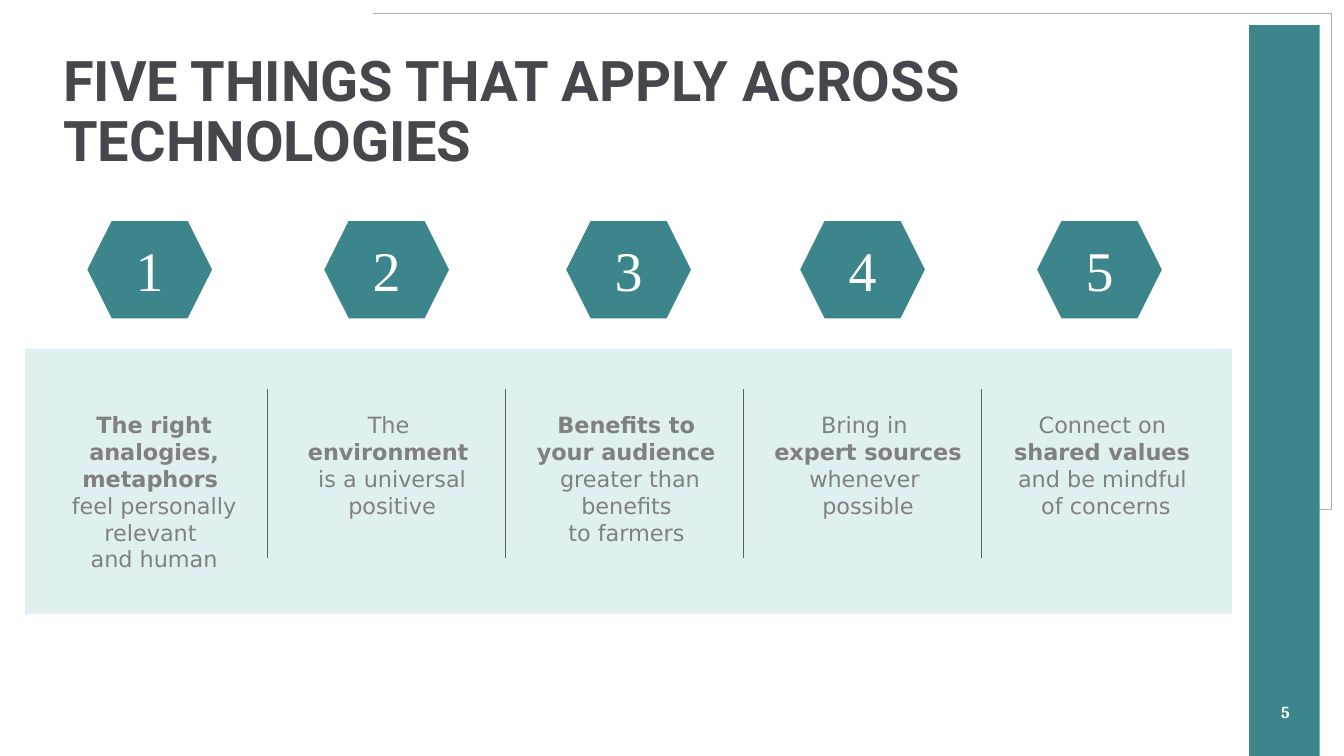
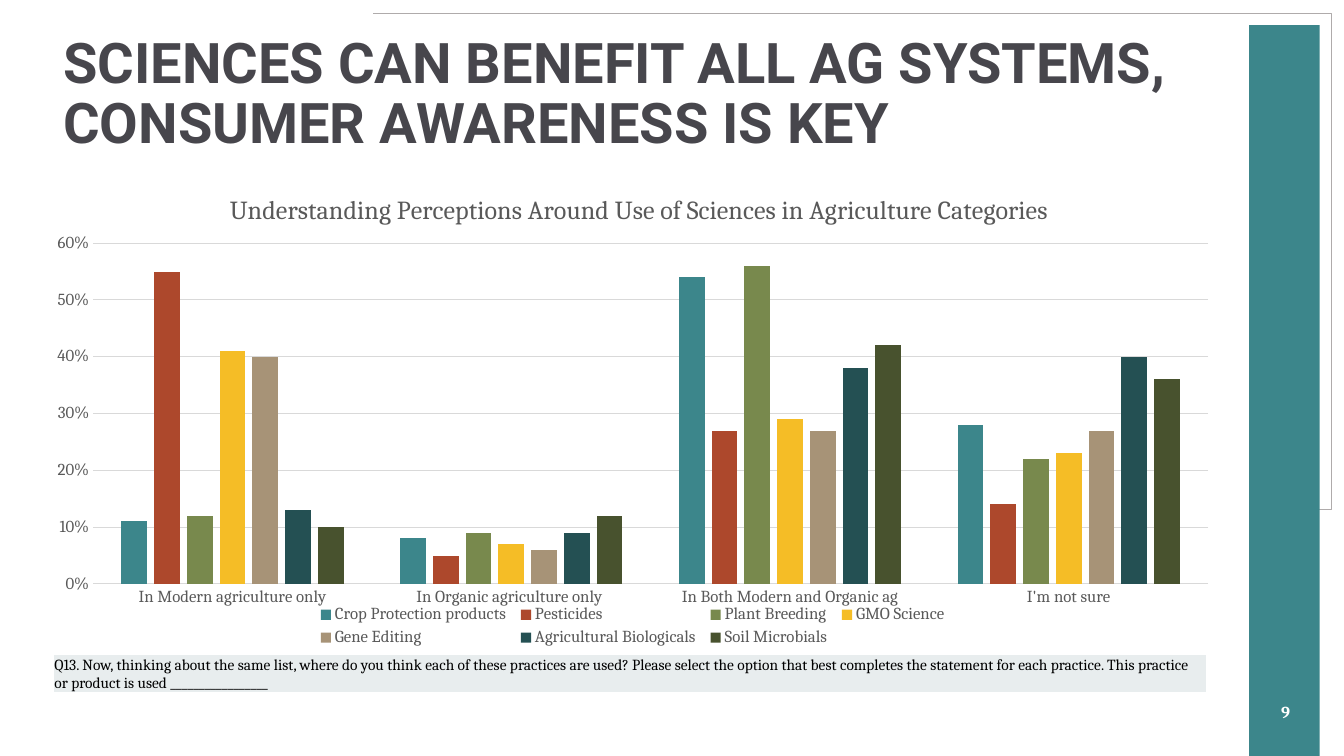
from typing import NamedTuple

from lxml.etree import SubElement
from pptx import Presentation
from pptx.chart.data import CategoryChartData
from pptx.dml.color import RGBColor
from pptx.enum.chart import XL_CHART_TYPE as ChartType, XL_LEGEND_POSITION as LegendPosition
from pptx.enum.chart import XL_TICK_MARK as TickMark
from pptx.enum.shapes import MSO_CONNECTOR as Connector, MSO_SHAPE as Preset
from pptx.enum.text import MSO_ANCHOR as Anchor, MSO_AUTO_SIZE as AutoSize, PP_ALIGN as Align
from pptx.oxml import parse_xml
from pptx.oxml.ns import nsdecls, qn
from pptx.util import Emu, Pt

# Scale: 100 px to the inch
PX = 9144

# Shared colours and fonts
TEAL = RGBColor(0x3C, 0x86, 0x8B)
PALE_TEAL = RGBColor(0xD4, 0xEB, 0xEC)
WHITE = RGBColor(0xFF, 0xFF, 0xFF)
BLACK = RGBColor(0x00, 0x00, 0x00)
HEADING = RGBColor(0x47, 0x46, 0x4C)
BODY = RGBColor(0x80, 0x80, 0x80)
FRAME = RGBColor(0xAF, 0xAB, 0xAB)
DIVIDER = RGBColor(0x5F, 0x5E, 0x65)
AXIS_TEXT = RGBColor(0x59, 0x59, 0x59)
GRID = RGBColor(0xD9, 0xD9, 0xD9)
NOTE_FILL = RGBColor(0xE8, 0xED, 0xEE)
RUST = RGBColor(0xAD, 0x48, 0x2C)
OLIVE = RGBColor(0x78, 0x89, 0x4D)
GOLD = RGBColor(0xF5, 0xBD, 0x26)
TAN = RGBColor(0xA7, 0x93, 0x77)
DEEP_TEAL = RGBColor(0x24, 0x50, 0x53)
MOSS = RGBColor(0x48, 0x52, 0x2E)

SERIF = "Cambria"
SANS = "DejaVu Sans"
TITLE_FONT = "Roboto"
NUMERAL_FONT = "Times New Roman"


class Box(NamedTuple):
    left: int
    top: int
    width: int
    height: int

    def emu(self) -> tuple:
        return tuple(px(v) for v in self)


class Phrase(NamedTuple):
    text: str
    bold: bool = False


class Lesson(NamedTuple):
    badge_left: int
    phrases: list[Phrase]


class Practice(NamedTuple):
    name: str
    shares: tuple
    color: RGBColor


LESSONS = [
    Lesson(83, [Phrase("The right analogies, metaphors \n", True),
                Phrase("feel personally relevant \nand human")]),
    Lesson(318, [Phrase("The \n"), Phrase("environment \n", True),
                 Phrase("is a universal positive")]),
    Lesson(558, [Phrase("Benefits to \nyour audience \n", True),
                 Phrase("greater than benefits \nto farmers ")]),
    Lesson(790, [Phrase("Bring in \n"), Phrase("expert sources\n", True),
                 Phrase("whenever \npossible")]),
    Lesson(1025, [Phrase("Connect on \n"), Phrase("shared values \n", True),
                  Phrase("and be mindful \nof concerns")]),
]

USES = ["In Modern agriculture only", "In Organic agriculture only ",
        "In Both Modern and Organic ag", "I'm not sure"]
PRACTICES = [
    Practice("Crop Protection products ", (0.11, 0.08, 0.54, 0.28), TEAL),
    Practice("Pesticides", (0.55, 0.05, 0.27, 0.14), RUST),
    Practice("Plant Breeding ", (0.12, 0.09, 0.56, 0.22), OLIVE),
    Practice("GMO Science", (0.41, 0.07, 0.29, 0.23), GOLD),
    Practice("Gene Editing ", (0.4, 0.06, 0.27, 0.27), TAN),
    Practice("Agricultural Biologicals ", (0.13, 0.09, 0.38, 0.4), DEEP_TEAL),
    Practice("Soil Microbials ", (0.1, 0.12, 0.42, 0.36), MOSS),
]


def px(value: int) -> Emu:
    return Emu(value * PX)


# Text helpers
def style_font(font, name: str, size: float, color: RGBColor, bold: bool = False) -> None:
    font.name, font.size, font.bold = name, Pt(size), bold
    font.color.rgb = color


def add_run(paragraph, text: str, name: str, size: float, color: RGBColor,
            bold: bool = False) -> None:
    """Add a run, turning each newline into a line break."""
    for index, line in enumerate(text.split("\n")):
        if index:
            paragraph.add_line_break()
        if line:
            run = paragraph.add_run()
            run.text = line
            style_font(run.font, name, size, color, bold)


def add_text_box(slide, box: Box, align=Align.LEFT, anchor=Anchor.MIDDLE):
    frame = slide.shapes.add_textbox(*box.emu()).text_frame
    frame.word_wrap = True
    frame.vertical_anchor = anchor
    frame.paragraphs[0].alignment = align
    return frame


# Shape helpers
def add_filled(slide, preset, box: Box, color: RGBColor):
    shape = slide.shapes.add_shape(preset, *box.emu())
    shape.shadow.inherit = False
    shape.fill.solid()
    shape.fill.fore_color.rgb = color
    shape.line.fill.background()
    return shape


def add_divider(slide, x: int, top: int, bottom: int) -> None:
    line = slide.shapes.add_connector(Connector.STRAIGHT, px(x), px(top), px(x), px(bottom))
    line.line.color.rgb = DIVIDER
    line.line.width = Pt(0.5)
    SubElement(line._element.spPr, qn("a:effectLst"))


# Parts shared by both slides
def add_base_slide(deck, title: str, title_top: int, number: int):
    slide = deck.slides.add_slide(deck.slide_layouts[6])
    outline = slide.shapes.build_freeform(1298, 505, scale=float(PX))
    outline.add_line_segments([(1320, 505), (1320, 13), (370, 13)], close=False)
    frame = outline.convert_to_shape()
    frame.shadow.inherit = False
    frame.fill.background()
    frame.line.color.rgb = FRAME
    frame.line.width = Pt(0.25)
    add_filled(slide, Preset.RECTANGLE, Box(1239, 25, 70, 725), TEAL)

    page = add_text_box(slide, Box(1252, 686, 46, 40), Align.CENTER)
    add_run(page.paragraphs[0], str(number), SERIF, 12, WHITE, True)
    heading = add_text_box(slide, Box(53, title_top, 1169, 145)).paragraphs[0]
    heading.line_spacing = 0.9
    add_run(heading, title, TITLE_FONT, 40, HEADING, True)
    return slide


# Slide with five numbered lessons
def add_lesson(slide, index: int, lesson: Lesson) -> None:
    pitch = 236
    badge = add_filled(slide, Preset.HEXAGON, Box(lesson.badge_left, 216, 131, 103), TEAL)
    badge.line.color.rgb = WHITE
    badge.line.width = Pt(4.5)
    badge.text_frame.vertical_anchor = Anchor.MIDDLE
    numeral = badge.text_frame.paragraphs[0]
    numeral.alignment = Align.CENTER
    add_run(numeral, str(index + 1), NUMERAL_FONT, 40, WHITE)

    advice = add_text_box(slide, Box(31 + index * pitch, 403, 234, 172), Align.CENTER, Anchor.TOP)
    advice.margin_right = 0
    advice.auto_size = AutoSize.SHAPE_TO_FIT_TEXT
    for phrase in lesson.phrases:
        add_run(advice.paragraphs[0], phrase.text, SANS, 16, BODY, phrase.bold)
    if index:
        add_divider(slide, 29 + index * pitch, 386, 554)


def build_lessons(deck) -> None:
    slide = add_base_slide(deck, "FIVE THINGS THAT APPLY ACROSS TECHNOLOGIES", 40, 5)
    panel = add_filled(slide, Preset.RECTANGLE, Box(25, 346, 1197, 263), PALE_TEAL)
    tint = panel._element.spPr.find(qn("a:solidFill"))[0]
    SubElement(tint, qn("a:alpha"), val="70000")
    for index, lesson in enumerate(LESSONS):
        add_lesson(slide, index, lesson)


# Slide with the perception chart
def place_in_chart(element, position: int, inner: bool = False, **parts: float) -> None:
    """Give a chart part a fixed place, as fractions of the chart."""
    for old in element.findall(qn("c:layout")):
        element.remove(old)
    layout = parse_xml(f"<c:layout {nsdecls('c')}><c:manualLayout/></c:layout>")
    manual = layout[0]
    if inner:
        SubElement(manual, qn("c:layoutTarget"), val="inner")
    for key in ("x", "y"):
        SubElement(manual, qn(f"c:{key}Mode"), val="edge")
    for key, value in parts.items():
        SubElement(manual, qn(f"c:{key}"), val=str(value))
    element.insert(position, layout)


def add_perception_chart(slide) -> None:
    data = CategoryChartData(number_format="0%")
    data.categories = USES
    for practice in PRACTICES:
        data.add_series(practice.name, practice.shares)
    chart = slide.shapes.add_chart(
        ChartType.COLUMN_CLUSTERED, *Box(33, 167, 1189, 479).emu(), data).chart
    style_font(chart.font, SERIF, 10, BLACK)

    heading = chart.chart_title.text_frame.paragraphs[0]
    add_run(heading, "Understanding Perceptions Around Use of Sciences in Agriculture Categories",
            SERIF, 18.6, AXIS_TEXT)
    place_in_chart(chart.chart_title._element, 1, x=0.16, y=0.04)
    place_in_chart(chart._chartSpace.chart.plotArea, 0, inner=True,
                   x=0.05, y=0.155, w=0.93, h=0.706)

    plot = chart.plots[0]
    plot.vary_by_categories = False
    plot.gap_width, plot.overlap = 219, -27
    for series, practice in zip(plot.series, PRACTICES):
        series.format.fill.solid()
        series.format.fill.fore_color.rgb = practice.color

    for axis in (chart.category_axis, chart.value_axis):
        axis.major_tick_mark = axis.minor_tick_mark = TickMark.NONE
        style_font(axis.tick_labels.font, SERIF, 12, AXIS_TEXT)
    shares = chart.value_axis
    shares.minimum_scale, shares.maximum_scale, shares.major_unit = 0, 0.6, 0.1
    shares.tick_labels.number_format = "0%"
    shares.tick_labels.number_format_is_linked = False
    shares.format.line.fill.background()
    for rule in (chart.category_axis.format.line, shares.major_gridlines.format.line):
        rule.color.rgb = GRID
        rule.width = Pt(0.75)

    chart.has_legend = True
    chart.legend.position = LegendPosition.BOTTOM
    chart.legend.include_in_layout = False
    style_font(chart.legend.font, SERIF, 12, AXIS_TEXT)


def add_question(slide) -> None:
    table = slide.shapes.add_table(1, 1, *Box(53, 649, 1144, 38).emu()).table
    table.first_row = table.horz_banding = False
    cell = table.cell(0, 0)
    cell.fill.solid()
    cell.fill.fore_color.rgb = NOTE_FILL
    cell.vertical_anchor = Anchor.BOTTOM
    cell.margin_left = cell.margin_top = cell.margin_right = px(1)
    cell.margin_bottom = 0
    for index, side in enumerate(("lnL", "lnR", "lnT", "lnB")):
        cell._tc.tcPr.insert(index, parse_xml(
            f'<a:{side} {nsdecls("a")} w="{Pt(1)}"><a:solidFill>'
            f'<a:srgbClr val="{WHITE}"/></a:solidFill></a:{side}>'))
    add_run(cell.text_frame.paragraphs[0],
            "Q13. Now, thinking about the same list, where do you think each of these practices "
            "are used? Please select the option that best completes the statement for each "
            "practice. This practice or product is used _________________",
            SERIF, 11, BLACK)


def build_perceptions(deck) -> None:
    slide = add_base_slide(
        deck, "SCIENCES CAN BENEFIT ALL AG SYSTEMS, CONSUMER AWARENESS IS KEY", 22, 9)
    add_perception_chart(slide)
    add_question(slide)


def main() -> None:
    deck = Presentation()
    deck.slide_width, deck.slide_height = px(1333), px(750)
    build_lessons(deck)
    build_perceptions(deck)
    deck.save("out.pptx")


if __name__ == "__main__":
    main()
